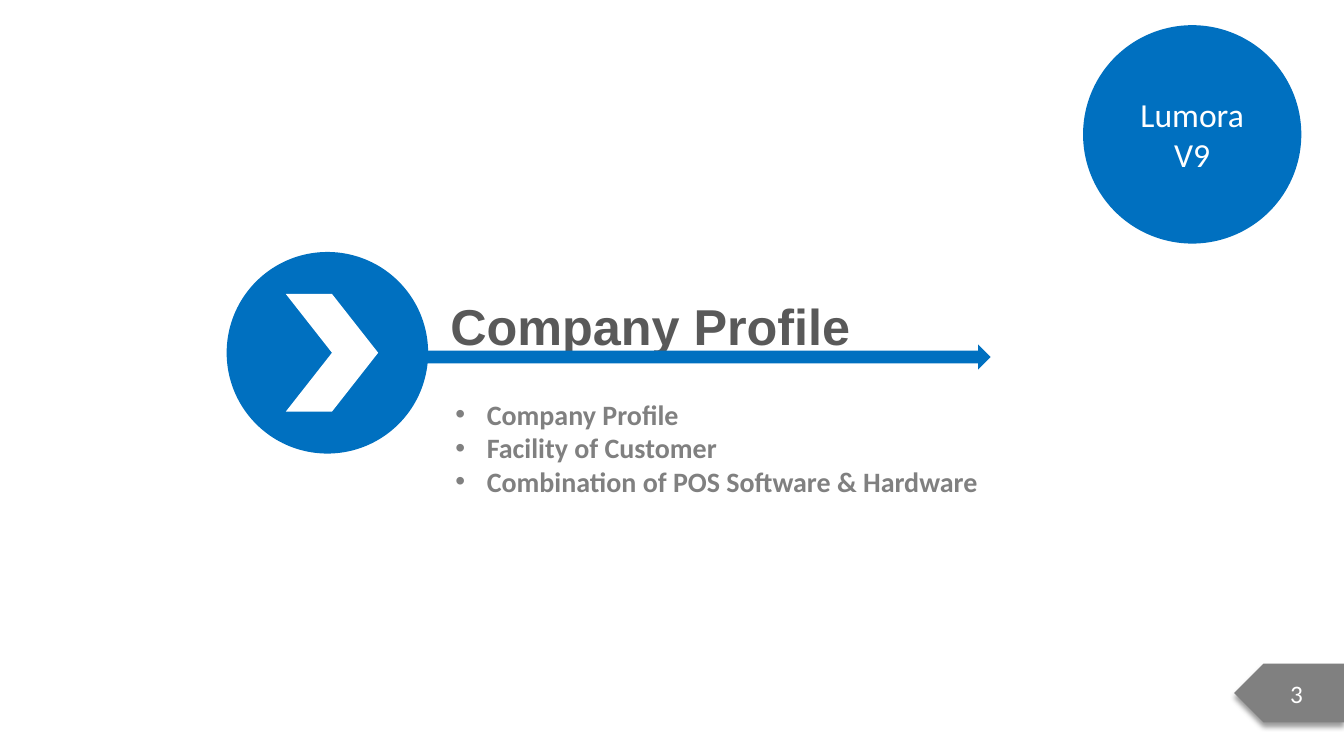
from dataclasses import dataclass

from lxml.etree import SubElement
from pptx import Presentation
from pptx.dml.color import RGBColor
from pptx.enum.shapes import MSO_SHAPE as Shape
from pptx.enum.text import MSO_ANCHOR as Anchor, MSO_AUTO_SIZE as AutoSize, PP_ALIGN as Align
from pptx.oxml.ns import qn
from pptx.util import Pt


@dataclass(frozen=True)
class Theme:
    """Colours, fonts and type sizes of the deck."""
    accent: str = "0070C0"
    white: str = "FFFFFF"
    heading: str = "595959"
    gray: str = "808080"
    shadow: str = "000000"
    heading_font: str = "Arial"
    body_font: str = "Calibri"
    title_size: int = 36
    badge_size: int = 24
    list_size: int = 20
    number_size: int = 18


class SlideBuilder:
    """Draws styled elements on the current slide."""

    def __init__(self, slide, theme):
        """Keep the slide and its theme."""
        self.slide = slide
        self.theme = theme

    def add_text(self, para, text, size, color, font, bold=False):
        """Add one formatted run to a paragraph."""
        span = para.add_run()
        span.text = text
        span.font.size = Pt(size)
        span.font.name = font
        span.font.bold = bold
        span.font.color.rgb = RGBColor.from_string(color)

    def shape(self, preset, bounds, color, text="", size=None):
        """Add a borderless preset shape with optional centred text."""
        box = self.slide.shapes.add_shape(preset, *map(Pt, bounds))
        box.shadow.inherit = False
        box.fill.solid()
        box.fill.fore_color.rgb = RGBColor.from_string(color)
        box.line.fill.background()
        if text:
            box.text_frame.vertical_anchor = Anchor.MIDDLE
            para = box.text_frame.paragraphs[0]
            para.alignment = Align.CENTER
            self.add_text(para, text, size, self.theme.white, self.theme.body_font)
        return box

    def page_tag(self, bounds, text):
        """Add the left-pointing page number tag with a soft shadow."""
        tag = self.shape(Shape.PENTAGON, bounds, self.theme.gray, text, self.theme.number_size)
        properties = tag.element.spPr
        properties.find(qn("a:xfrm")).set("flipH", "1")
        shadow = SubElement(properties.find(qn("a:effectLst")), qn("a:outerShdw"),
                            blurRad=str(Pt(4)), dist=str(Pt(3)), dir="5400000",
                            algn="t", rotWithShape="0")
        color = SubElement(shadow, qn("a:srgbClr"), val=self.theme.shadow)
        SubElement(color, qn("a:alpha"), val="40000")

    def place(self, holder, bounds):
        """Move a placeholder and return its prepared text frame."""
        holder.left, holder.top, holder.width, holder.height = map(Pt, bounds)
        frame = holder.text_frame
        frame.word_wrap = False
        frame.auto_size = AutoSize.SHAPE_TO_FIT_TEXT
        frame.vertical_anchor = Anchor.TOP
        return frame

    def title(self, bounds, text):
        """Fill the title placeholder."""
        para = self.place(self.slide.shapes.title, bounds).paragraphs[0]
        para.alignment = Align.LEFT
        para.line_spacing = 1.5
        self.add_text(para, text, self.theme.title_size, self.theme.heading,
                      self.theme.heading_font, bold=True)

    def bullets(self, bounds, items, indent):
        """Fill the body placeholder with a bulleted list."""
        frame = self.place(self.slide.placeholders[1], bounds)
        for index, item in enumerate(items):
            para = frame.add_paragraph() if index else frame.paragraphs[0]
            properties = para._p.get_or_add_pPr()
            properties.set("marL", str(Pt(indent)))
            properties.set("indent", str(-Pt(indent)))
            SubElement(properties, qn("a:buFont"), typeface=self.theme.heading_font)
            SubElement(properties, qn("a:buChar"), char="•")
            para.space_before = Pt(0)
            self.add_text(para, item, self.theme.list_size, self.theme.gray,
                          self.theme.body_font, bold=True)


def main():
    """Build the section slide and save the deck."""
    deck = Presentation()
    deck.slide_width, deck.slide_height = Pt(960.5), Pt(540)
    theme = Theme()
    page = SlideBuilder(deck.slides.add_slide(deck.slide_layouts[1]), theme)

    page.title((314.6, 185.8, 303, 72.7), "Company Profile")
    page.bullets((318.2, 280, 391.7, 80),
                 ("Company Profile", "Facility of Customer",
                  "Combination of POS Software & Hardware"), indent=22.5)
    page.shape(Shape.OVAL, (774, 18, 156, 156), theme.accent, "Lumora V9", theme.badge_size)
    page.shape(Shape.OVAL, (162, 180, 144, 144), theme.accent)
    page.shape(Shape.CHEVRON, (204.3, 210, 66, 84), theme.white)
    page.shape(Shape.RIGHT_ARROW, (300, 246, 408, 18), theme.accent)
    page.page_tag((882, 474, 78.5, 42), "3")
    deck.save("out.pptx")


if __name__ == "__main__":
    main()
